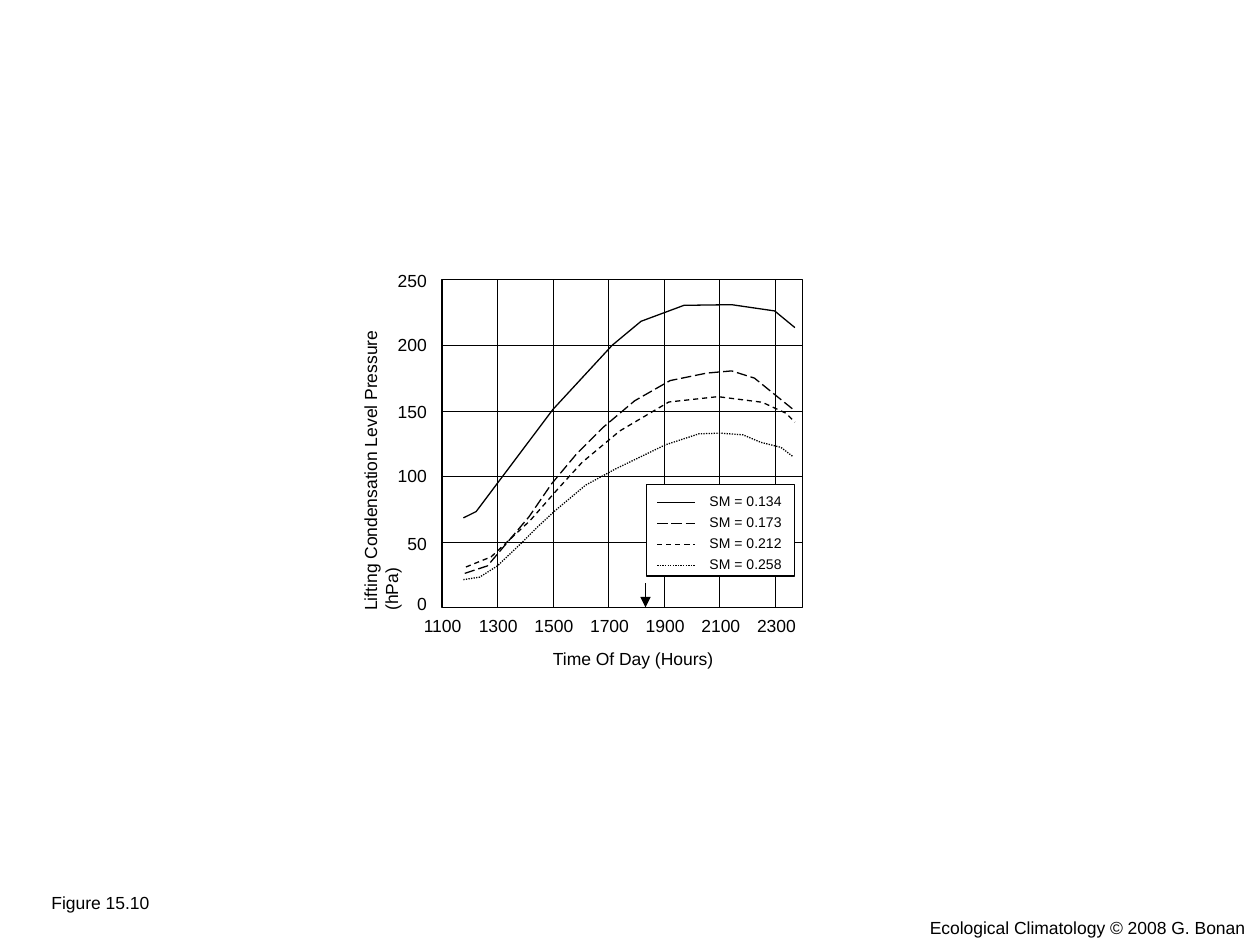
from pptx import Presentation
from pptx import util as u
from pptx.dml.color import RGBColor
from pptx.enum import dml, shapes, text
from pptx.oxml.ns import qn
from lxml import etree

Pt = u.Pt
BLACK, WHITE = "000000", "FFFFFF"
DASH = dml.MSO_LINE
CENTER, LEFT_ALIGN, RIGHT = text.PP_ALIGN.CENTER, text.PP_ALIGN.LEFT, text.PP_ALIGN.RIGHT

presentation = Presentation()
presentation.slide_width, presentation.slide_height = Pt(720), Pt(540)
slide = presentation.slides.add_slide(presentation.slide_layouts[6])

# Plot area and its scales: hours across, hPa upwards
LEFT, TOP, BOTTOM = 252.6, 159.9, 347.1
FIRST_HOUR, LAST_HOUR, MAX_PRESSURE = 11, 24, 250
HOUR_WIDTH = 15.84
WIDTH, HEIGHT = (LAST_HOUR - FIRST_HOUR) * HOUR_WIDTH, BOTTOM - TOP
LABEL_HEIGHT = 19.4
HAIRLINE = 0.05


def add_line(x1, y1, x2, y2, width=0.75, dash=None):
    line = slide.shapes.add_connector(
        shapes.MSO_CONNECTOR.STRAIGHT, Pt(x1), Pt(y1), Pt(x2), Pt(y2))
    line.line.color.rgb = RGBColor.from_string(BLACK)
    line.line.width = Pt(width)
    if dash:
        line.line.dash_style = dash
    etree.SubElement(line._element.spPr, qn("a:effectLst"))
    return line


def add_label(words, left, top, width, height=LABEL_HEIGHT, size=10,
              align=LEFT_ALIGN, wrap=False, margins=(7.2, 3.6)):
    box = slide.shapes.add_textbox(Pt(left), Pt(top), Pt(width), Pt(height))
    side, edge = (Pt(margin) for margin in margins)
    frame_format = {"word_wrap": wrap, "margin_left": side, "margin_right": side,
                    "margin_top": edge, "margin_bottom": edge}
    for name, value in frame_format.items():
        setattr(box.text_frame, name, value)
    if not wrap:
        box.text_frame.auto_size = text.MSO_AUTO_SIZE.SHAPE_TO_FIT_TEXT
    paragraph = box.text_frame.paragraphs[0]
    paragraph.alignment = align
    run = paragraph.add_run()
    run.text = words
    for name, value in {"name": "Arial", "size": Pt(size)}.items():
        setattr(run.font, name, value)
    run.font.color.rgb = RGBColor.from_string(BLACK)
    return box


# Arrow on the time axis
arrow = add_line(368.9, 333.4, 368.9, BOTTOM)
etree.SubElement(arrow.line._get_or_add_ln(), qn("a:tailEnd"), type="triangle")

# Plot frame
frame = slide.shapes.add_shape(
    shapes.MSO_SHAPE.RECTANGLE, Pt(LEFT), Pt(TOP), Pt(WIDTH), Pt(HEIGHT))
frame.fill.background()

# Grid
for hour in range(13, LAST_HOUR, 2):
    x = LEFT + (hour - FIRST_HOUR) * HOUR_WIDTH
    add_line(x, BOTTOM, x, TOP, width=HAIRLINE)
for pressure in range(50, MAX_PRESSURE, 50):
    y = BOTTOM - pressure / MAX_PRESSURE * HEIGHT
    add_line(LEFT, y, LEFT + WIDTH, y, width=HAIRLINE)

# Curves as (hour, hPa), one for each soil moisture
curves = [
    ("SM = 0.134", None,
     [(11.77, 68.3), (12.23, 73.1), (15, 151), (17.14, 200), (18.18, 218.3),
      (19.73, 230.5), (21.45, 231), (23, 226.2), (23.73, 213.5)]),
    ("SM = 0.173", DASH.LONG_DASH,
     [(11.82, 26), (12.64, 31.7), (14.14, 69.2), (14.95, 94.2), (15.86, 117.3),
      (16.82, 137.5), (17.95, 157.7), (19.23, 173.1), (20.55, 178.8),
      (21.45, 180.5), (22.27, 175), (23.73, 150)]),
    ("SM = 0.212", DASH.DASH,
     [(11.86, 30.8), (12.77, 38.5), (14.18, 66.3), (15.18, 90.4), (16.05, 110.6),
      (17.41, 134.6), (19.18, 156.7), (20.95, 160.8), (22.55, 156.5),
      (23.41, 148.1), (23.73, 141.3)]),
    ("SM = 0.258", DASH.ROUND_DOT,
     [(11.77, 21.2), (12.36, 23.1), (13, 31.7), (13.86, 49), (14.45, 61.5),
      (15.09, 74), (16.18, 93.3), (17.27, 105.8), (19.05, 124), (20.27, 132.5),
      (21.05, 133), (21.86, 131.7), (22.5, 126), (23.23, 122.1), (23.64, 115.4)]),
]
outlined = [frame]
for name, dash, values in curves:
    points = [(Pt(LEFT + (hour - FIRST_HOUR) * HOUR_WIDTH),
               Pt(BOTTOM - pressure / MAX_PRESSURE * HEIGHT))
              for hour, pressure in values]
    builder = slide.shapes.build_freeform(*points[0])
    builder.add_line_segments(points[1:], close=False)
    curve = builder.convert_to_shape()
    curve.fill.background()
    if dash:
        curve.line.dash_style = dash
    outlined.append(curve)

# Legend
legend = slide.shapes.add_shape(
    shapes.MSO_SHAPE.RECTANGLE, Pt(369.4), Pt(276.8), Pt(84.6), Pt(52.4))
outlined.append(legend)
white_boxes = [legend]
for row, (name, dash, values) in enumerate(curves):
    y = 287.2 + 12 * row
    white_boxes.append(
        add_label(name, 405.4, y - 5.8, 42, height=9.4, size=8, margins=(0, 0)))
    add_line(375.6, y, 397.4, y, dash=dash)
for box in white_boxes:
    box.fill.solid()
    box.fill.fore_color.rgb = RGBColor.from_string(WHITE)

for shape in outlined:
    shape.shadow.inherit = False
    shape.line.color.rgb = RGBColor.from_string(BLACK)
    shape.line.width = Pt(0.75)

# Axis labels
for column, hour in enumerate(range(FIRST_HOUR, LAST_HOUR, 2)):
    add_label(str(hour * 100), 234.5 + 31.8 * column, 347.8, 36.8, align=CENTER)
pressure_tops = [335.5, 301, 262.1, 225.4, 187.2, 150.5]
for row, top in enumerate(pressure_tops):
    label = str(row * 50)
    width = 14.4 + 5.56 * len(label)
    add_label(label, 251 - width, top, width, align=RIGHT)

# Axis titles
add_label("Time Of Day (Hours)", 308.9, 366.5, 106.6)
pressure_title = add_label("Lifting Condensation Level Pressure (hPa)",
                           113.7, 248.4, 196, wrap=True)
pressure_title.rotation = 270

# Figure number and credit
add_label("Figure 15.10", 22.3, 506.2, 74.9, wrap=True)
add_label("Ecological Climatology © 2008 G. Bonan", 524.2, 520.6, 195.8)

presentation.save("out.pptx")
